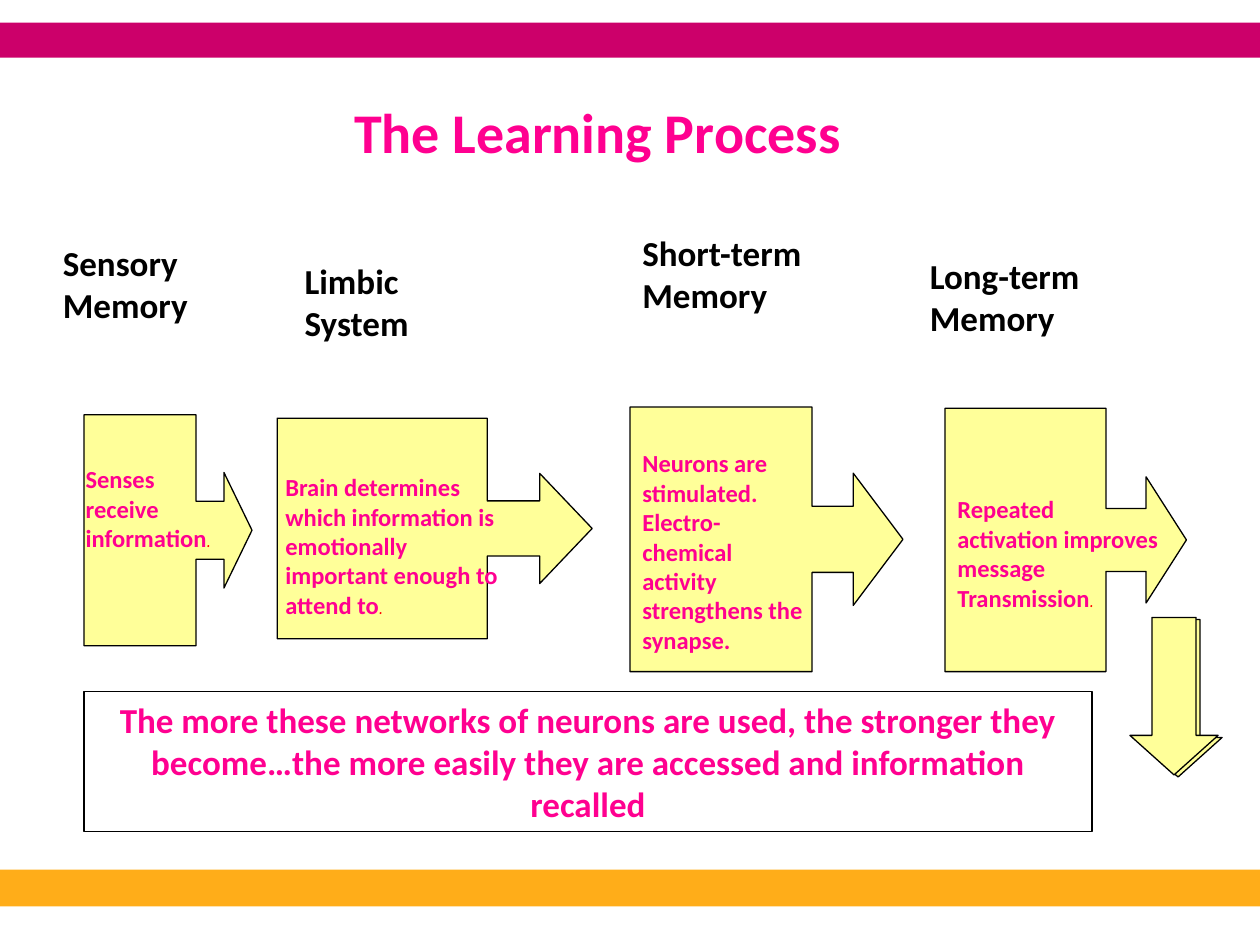
from dataclasses import dataclass

from pptx import Presentation
from pptx import util as u
from pptx.dml import color
from pptx.enum import shapes, text

PINK, BLACK, YELLOW = "FF0090", "000000", "FFFF99"
SHAPE = shapes.MSO_SHAPE


@dataclass(frozen=True)
class Box:
    left: float
    top: float
    width: float
    height: float

    def lengths(self) -> tuple:
        return tuple(u.Pt(v) for v in (self.left, self.top, self.width, self.height))


@dataclass(frozen=True)
class Caption:
    box: Box
    lines: tuple
    size: float
    color: str = PINK
    centered: bool = False
    anchor: text.MSO_ANCHOR = text.MSO_ANCHOR.MIDDLE
    wrap: bool = True
    red_stop: bool = False


@dataclass(frozen=True)
class Figure:
    kind: shapes.MSO_SHAPE
    box: Box
    fill: str = ""
    line: str = ""
    adjustments: tuple = ()


def paint(target, value: str) -> None:
    target.solid()
    target.fore_color.rgb = color.RGBColor.from_string(value)


def add_run(paragraph, words: str, font: str, size: float, value: str, bold: bool) -> None:
    run = paragraph.add_run()
    run.text = words
    run.font.name, run.font.size, run.font.bold = font, u.Pt(size), bold
    paint(run.font.fill, value)


def write(shape, caption: Caption) -> None:
    frame = shape.text_frame
    frame.word_wrap = caption.wrap
    frame.auto_size = text.MSO_AUTO_SIZE.SHAPE_TO_FIT_TEXT
    frame.vertical_anchor = caption.anchor
    for index, line in enumerate(caption.lines):
        paragraph = frame.add_paragraph() if index else frame.paragraphs[0]
        paragraph.alignment = text.PP_ALIGN.CENTER if caption.centered else text.PP_ALIGN.LEFT
        add_run(paragraph, line, "Calibri", caption.size, caption.color, True)
    if caption.red_stop:
        add_run(paragraph, ".", "Comic Neue", caption.size, "FF0000", False)


def add_caption(slide, caption: Caption) -> None:
    write(slide.shapes.add_textbox(*caption.box.lengths()), caption)


def add_figure(slide, figure: Figure):
    shape = slide.shapes.add_shape(figure.kind, *figure.box.lengths())
    shape.shadow.inherit = False
    for index, value in enumerate(figure.adjustments):
        shape.adjustments[index] = value
    if figure.fill:
        paint(shape.fill, figure.fill)
    else:
        shape.fill.background()
    if figure.line:
        paint(shape.line.fill, figure.line)
        shape.line.width = u.Pt(0.75)
    else:
        shape.line.fill.background()
    return shape


def callout(box: Box, shaft: float, head: float) -> Figure:
    return Figure(SHAPE.RIGHT_ARROW_CALLOUT, box, YELLOW, BLACK, (shaft, shaft, head, 0.667))


def down_arrow(left: float, top: float) -> Figure:
    return Figure(SHAPE.DOWN_ARROW, Box(left, top, 50.4, 90), YELLOW, BLACK, (0.5, 0.448))


BARS = (
    Figure(SHAPE.RECTANGLE, Box(0, 497, 720, 21), "FFAD19"),
    Figure(SHAPE.RECTANGLE, Box(0, 13, 720, 20), "CC006A"),
)
TITLE = Caption(Box(29, 52, 625, 46), ("The Learning Process",), 32,
                centered=True, anchor=text.MSO_ANCHOR.TOP)
STAGES = (
    Caption(Box(28.8, 134, 96, 55.5), ("Sensory", "Memory"), 20, BLACK),
    Caption(Box(167, 144.7, 132.5, 55.5), ("Limbic", "System"), 20, BLACK),
    Caption(Box(360, 116.6, 112.3, 80), ("Short-term", "Memory"), 20, BLACK),
    Caption(Box(524.2, 141.8, 147.6, 55.5), ("Long-term", "Memory"), 20, BLACK),
)
CALLOUTS = (
    callout(Box(48, 237, 96, 132), 0.344, 0.167),
    callout(Box(158.4, 239, 180, 126), 0.25, 0.238),
    callout(Box(360, 232.6, 156, 151.2), 0.25, 0.188),
    callout(Box(540, 233.3, 138, 150.5), 0.261, 0.167),
)
DETAILS = (
    Caption(Box(41.8, 261.4, 87.8, 58.3), ("Senses", "receive", "information"), 14,
            wrap=False, red_stop=True),
    Caption(Box(156, 265.7, 144, 92.2),
            ("Brain determines", "which information is emotionally",
             "important enough to attend to"), 14, red_stop=True),
    Caption(Box(360, 252, 106.6, 126),
            ("Neurons are stimulated. Electro-chemical activity strengthens the synapse.",), 14),
    Caption(Box(540, 278.6, 132, 75),
            ("Repeated", "activation improves message", "Transmission"), 14, red_stop=True),
)
SUMMARY = Caption(
    Box(48, 395.2, 576, 80),
    ("The more these networks of neurons are used, the stronger they become…"
     "the more easily they are accessed and information recalled",), 20, centered=True)


def main() -> None:
    """Build the learning process slide."""
    presentation = Presentation()
    presentation.slide_width, presentation.slide_height = u.Pt(720), u.Pt(540)
    slide = presentation.slides.add_slide(presentation.slide_layouts[6])
    for bar in BARS:
        add_figure(slide, bar)
    for caption in (TITLE, *STAGES):
        add_caption(slide, caption)
    for figure in CALLOUTS:
        add_figure(slide, figure)
    for caption in DETAILS:
        add_caption(slide, caption)
    add_figure(slide, down_arrow(648, 354))
    write(add_figure(slide, Figure(SHAPE.RECTANGLE, SUMMARY.box, line=BLACK)), SUMMARY)
    add_figure(slide, down_arrow(645.7, 352.8))
    presentation.save("out.pptx")


if __name__ == "__main__":
    main()
